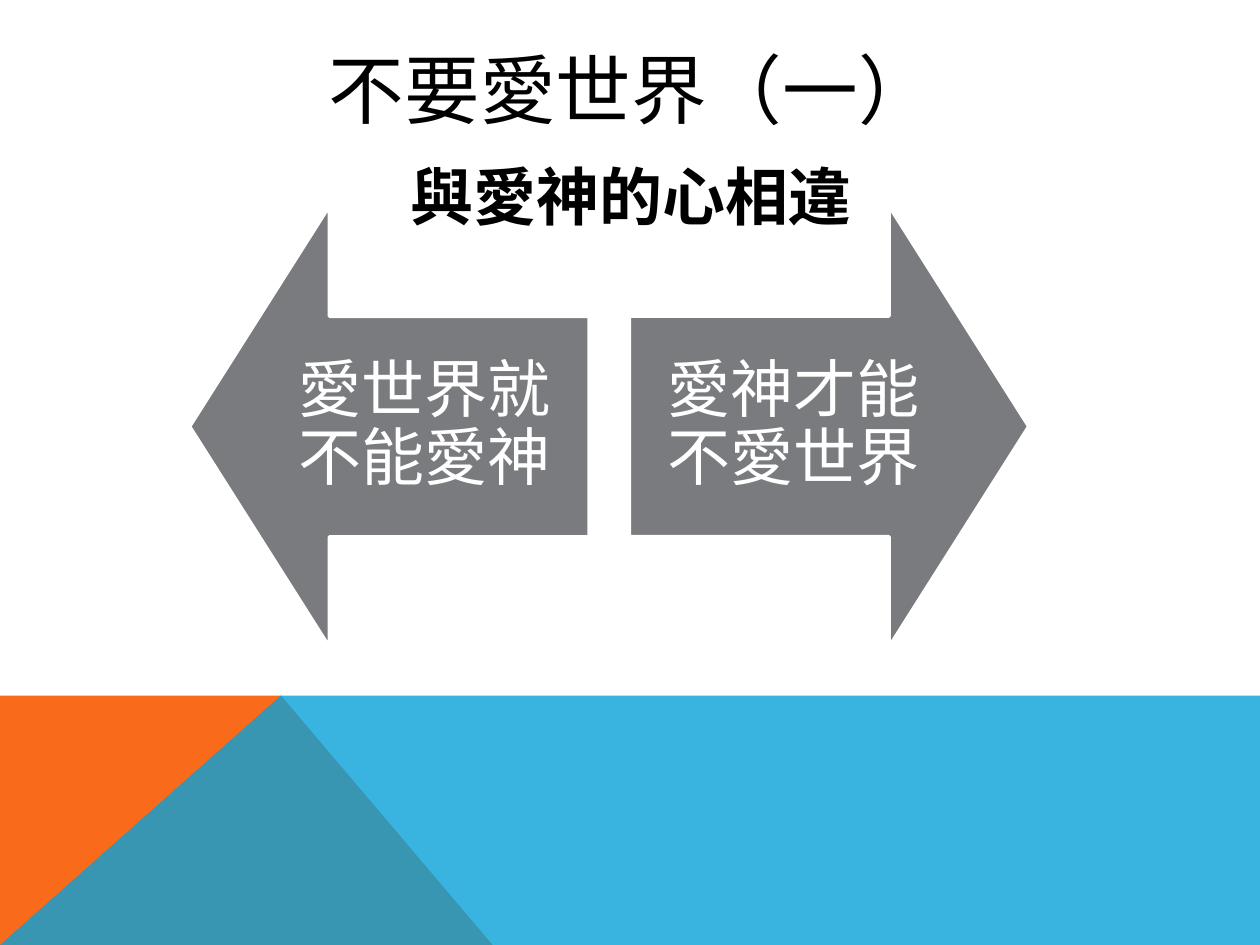
from dataclasses import dataclass

from pptx import Presentation
from pptx.dml.color import RGBColor
from pptx.enum.shapes import MSO_SHAPE as Shape
from pptx.enum.text import MSO_ANCHOR as Anchor, MSO_AUTO_SIZE as AutoSize, PP_ALIGN as Align
from pptx.oxml.ns import qn
from pptx.util import Inches, Pt

BLACK = RGBColor(0x00, 0x00, 0x00)
WHITE = RGBColor(0xFF, 0xFF, 0xFF)
GRAY = RGBColor(0x79, 0x7B, 0x7E)
ORANGE = RGBColor(0xF9, 0x6A, 0x1B)
BLUE = RGBColor(0x08, 0xA1, 0xD9)
FONT = "Lato"

SLIDE_W, SLIDE_H = 10, 7.5
BAND_TOP, PEAK_X = 5.52, 2.23
ARROW_W, ARROW_H, ARROW_TOP = 3.5, 3.17, 1.8
LABEL_W, LABEL_H, LABEL_TOP = 2.62, 1.75, 2.51


@dataclass
class Arrow:
    text: str
    left: float
    label_left: float
    rotation: int


ARROWS = [
    Arrow("愛世界就不能愛神", 1.34, 2.06, 270),
    Arrow("愛神才能不愛世界", 4.83, 4.99, 90),
]


def place(shape, left: float, top: float, width: float, height: float) -> None:
    shape.left, shape.top = Inches(left), Inches(top)
    shape.width, shape.height = Inches(width), Inches(height)


def write(shape, text: str, *, size: float, color: RGBColor, bold: bool = False,
          anchor=Anchor.MIDDLE, inset: float | None = None, before: float = 0,
          after: float = 0, spacing: float = 1.0) -> None:
    frame = shape.text_frame
    frame.word_wrap = True
    frame.auto_size = AutoSize.NONE
    frame.vertical_anchor = anchor
    if inset is not None:
        frame.margin_left = frame.margin_right = Inches(inset)
        frame.margin_top = frame.margin_bottom = Inches(inset)
    paragraph = frame.paragraphs[0]
    paragraph.alignment = Align.CENTER
    paragraph.line_spacing = spacing
    paragraph.space_before, paragraph.space_after = Pt(before), Pt(after)
    run = paragraph.add_run()
    run.text = text
    font = run.font
    font.name, font.size, font.bold = FONT, Pt(size), bold
    font.color.rgb = color


def draw_panel(slide, points: list[tuple[float, float]], color: RGBColor,
               opacity: int = 100) -> None:
    corners = [(Inches(x), Inches(y)) for x, y in points]
    builder = slide.shapes.build_freeform(*corners[0])
    builder.add_line_segments(corners[1:], close=True)
    panel = builder.convert_to_shape()
    panel.shadow.inherit = False
    panel.fill.solid()
    panel.fill.fore_color.rgb = color
    panel.line.fill.background()
    if opacity < 100:
        fill_color = panel.fill._xPr.find(qn("a:solidFill"))[0]
        alpha = fill_color.makeelement(qn("a:alpha"), {"val": str(opacity * 1000)})
        fill_color.append(alpha)


def draw_arrow(slide, arrow: Arrow) -> None:
    body = slide.shapes.add_shape(Shape.UP_ARROW, Inches(arrow.left), Inches(ARROW_TOP),
                                  Inches(ARROW_W), Inches(ARROW_H))
    body.adjustments[0], body.adjustments[1] = 0.5, 0.35
    body.rotation = arrow.rotation
    body.shadow.inherit = False
    body.fill.solid()
    body.fill.fore_color.rgb = GRAY
    body.line.color.rgb = WHITE
    body.line.width = Pt(2)
    label = slide.shapes.add_textbox(Inches(arrow.label_left), Inches(LABEL_TOP),
                                     Inches(LABEL_W), Inches(LABEL_H))
    write(label, arrow.text, size=36, color=WHITE, inset=0.28, spacing=0.9, after=12.6)


def main() -> None:
    deck = Presentation()
    deck.slide_width, deck.slide_height = Inches(SLIDE_W), Inches(SLIDE_H)
    slide = deck.slides.add_slide(deck.slide_layouts[1])

    # Title and subtitle
    title, subtitle = slide.placeholders
    place(title, 0.9, 0.4, 8.22, 0.6)
    write(title, "不要愛世界（一）", size=43.2, color=BLACK)
    place(subtitle, 0.9, 1.2, 8.22, 3.91)
    write(subtitle, "與愛神的心相違", size=36, color=BLACK, bold=True,
          anchor=Anchor.TOP, before=8)
    properties = subtitle.text_frame.paragraphs[0]._p.get_or_add_pPr()
    properties.set("marL", "0")
    properties.set("indent", "0")
    properties.append(properties.makeelement(qn("a:buNone"), {}))

    # Coloured band along the bottom
    peak = (PEAK_X, BAND_TOP)
    draw_panel(slide, [(0, SLIDE_H), (0, BAND_TOP), peak, (3.91, SLIDE_H)], ORANGE)
    draw_panel(slide, [(0, SLIDE_H), peak, (SLIDE_W, BAND_TOP), (SLIDE_W, SLIDE_H)],
               BLUE, opacity=80)

    # Opposing arrows
    for arrow in ARROWS:
        draw_arrow(slide, arrow)

    deck.save("out.pptx")


if __name__ == "__main__":
    main()
